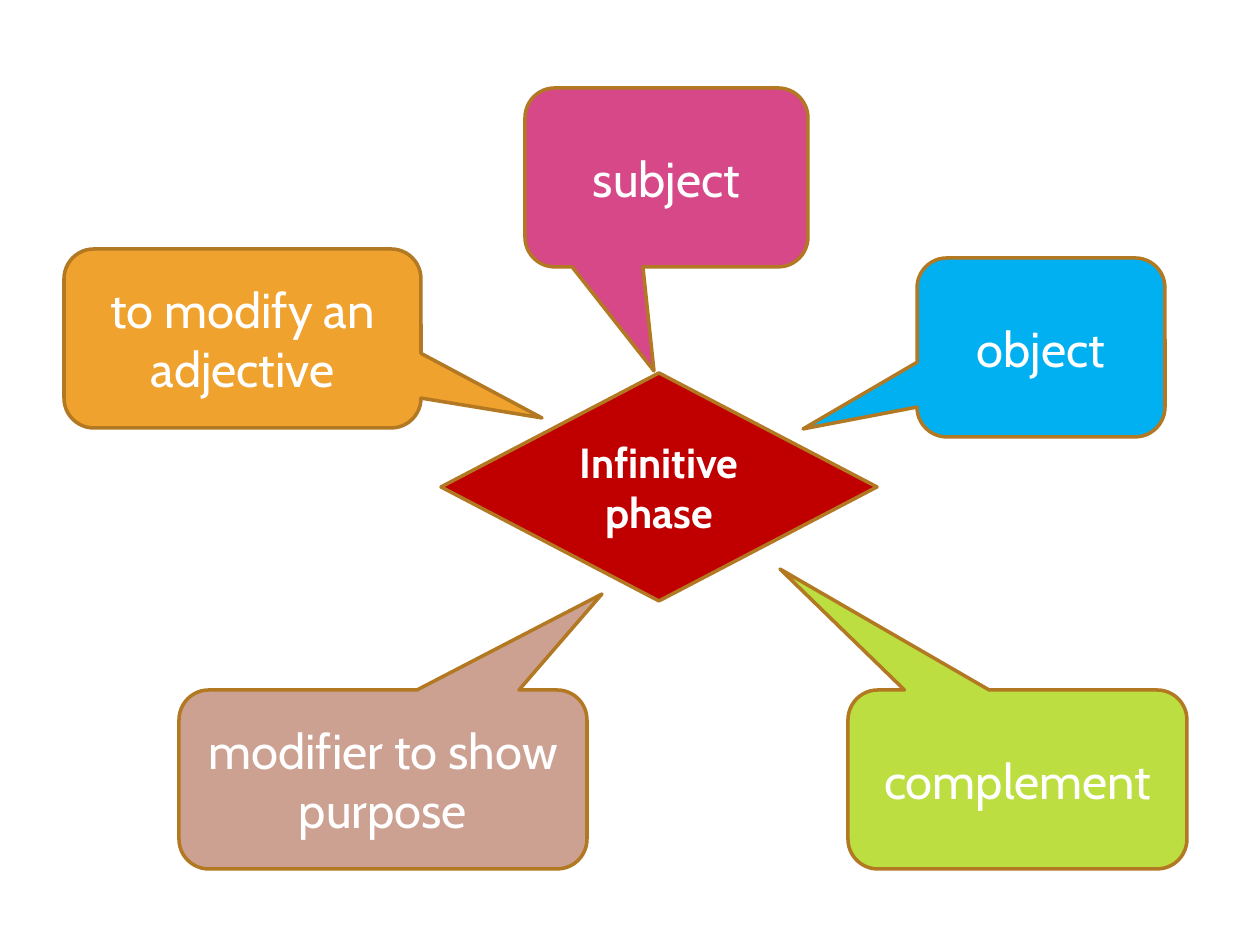
from pptx import Presentation
from pptx.dml.color import RGBColor
from pptx.enum.shapes import MSO_SHAPE
from pptx.enum.text import MSO_ANCHOR, PP_ALIGN
from pptx.util import Emu, Inches, Pt

PX_PER_INCH = 126
FONT = "Cabin"
WHITE = RGBColor(0xFF, 0xFF, 0xFF)
BRONZE = RGBColor(0xB2, 0x78, 0x22)
RED = RGBColor(0xC0, 0x00, 0x00)
PINK = RGBColor(0xD6, 0x48, 0x88)
BLUE = RGBColor(0x00, 0xB0, 0xF0)
ORANGE = RGBColor(0xF0, 0xA2, 0x2E)
TAN = RGBColor(0xCC, 0xA1, 0x92)
LIME = RGBColor(0xBC, 0xDE, 0x40)

CALLOUT_HEIGHT = 179
# text, left, top, width, tip of the pointer, fill
CALLOUTS = [
    ("subject", 525, 88, 283, (654, 371), PINK),
    ("object", 917, 258, 248, (803, 429), BLUE),
    ("to modify an adjective", 64, 249, 357, (542, 418), ORANGE),
    ("modifier to show purpose", 179, 690, 408, (602, 594), TAN),
    ("complement", 848, 690, 339, (780, 569), LIME),
]


def px(length):
    return Emu(round(length * Inches(1) / PX_PER_INCH))


def add_box(slide, kind, bounds, text, fill, size, bold=False):
    """Add an outlined preset shape with centred white text."""
    box = slide.shapes.add_shape(kind, *(px(length) for length in bounds))
    box.shadow.inherit = False
    box.fill.solid()
    box.fill.fore_color.rgb = fill
    box.line.color.rgb = BRONZE
    box.line.width = Pt(2)
    frame = box.text_frame
    frame.word_wrap = True
    frame.vertical_anchor = MSO_ANCHOR.MIDDLE
    frame.text = text
    para = frame.paragraphs[0]
    para.alignment = PP_ALIGN.CENTER
    font = para.runs[0].font
    font.name = FONT
    font.size = Pt(size)
    font.bold = bold
    font.color.rgb = WHITE
    return box


def add_callout(slide, text, left, top, width, tip, fill):
    """Add a rounded callout whose pointer ends at tip."""
    bounds = (left, top, width, CALLOUT_HEIGHT)
    box = add_box(slide, MSO_SHAPE.ROUNDED_RECTANGULAR_CALLOUT, bounds, text, fill, 28)
    # The pointer is set as an offset from the centre, in box widths and heights.
    box.adjustments[0] = (tip[0] - left) / width - 0.5
    box.adjustments[1] = (tip[1] - top) / CALLOUT_HEIGHT - 0.5


def main():
    deck = Presentation()
    deck.slide_width = Inches(10)
    deck.slide_height = Inches(7.5)
    slide = deck.slides.add_slide(deck.slide_layouts[6])
    add_box(slide, MSO_SHAPE.FLOWCHART_DECISION, (441, 373, 436, 228),
            "Infinitive phase", RED, 24, bold=True)
    for callout in CALLOUTS:
        add_callout(slide, *callout)
    deck.save("out.pptx")


if __name__ == "__main__":
    main()
